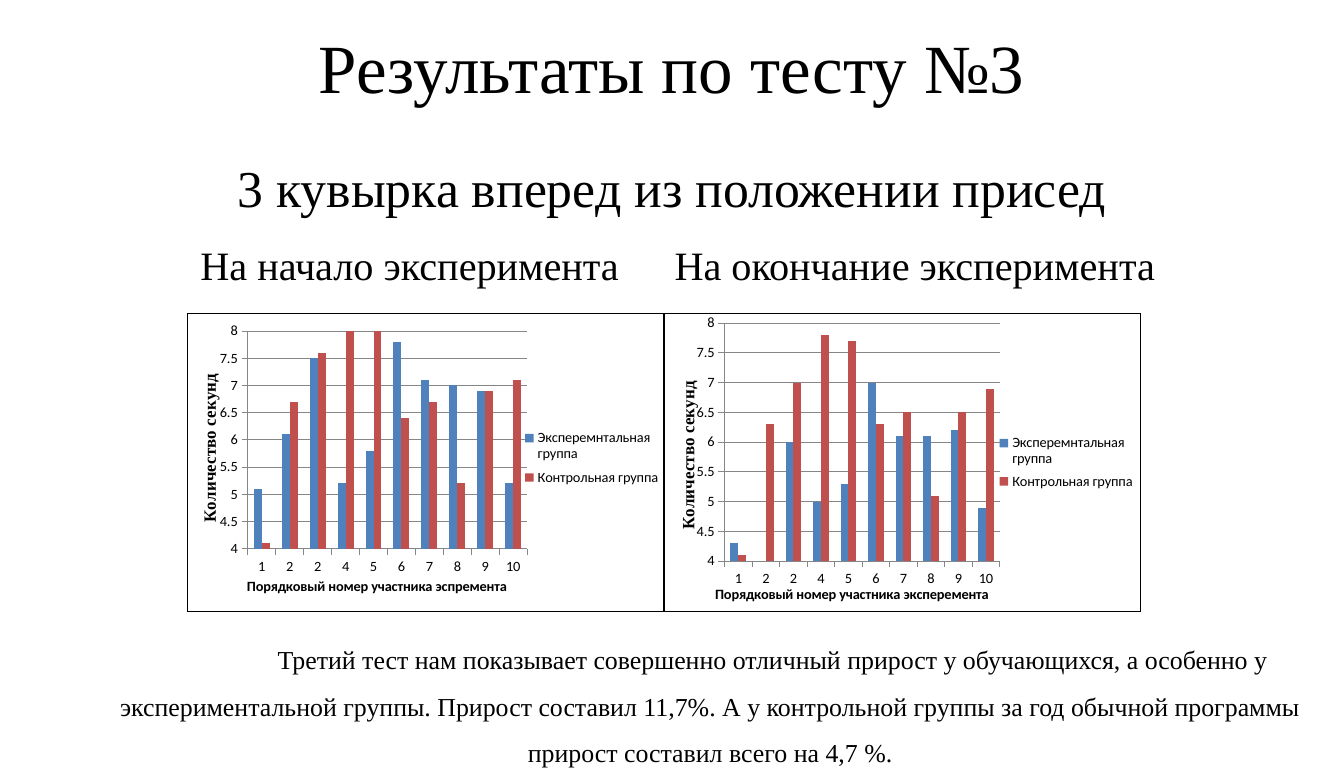
from lxml import etree
from pptx import Presentation
from pptx.chart.data import CategoryChartData
from pptx.dml.color import RGBColor
from pptx.enum.chart import XL_CHART_TYPE, XL_LEGEND_POSITION, XL_TICK_MARK
from pptx.enum.text import MSO_ANCHOR, PP_ALIGN
from pptx.oxml import parse_xml
from pptx.oxml.ns import nsdecls, qn
from pptx.util import Cm, Pt

BLACK = RGBColor(0x00, 0x00, 0x00)
GREY = RGBColor(0x86, 0x86, 0x86)
BLUE = RGBColor(0x4F, 0x81, 0xBD)
RED = RGBColor(0xC0, 0x50, 0x4D)
SERIF, SANS = "Times New Roman", "Calibri"
LEFT, CENTER = PP_ALIGN.LEFT, PP_ALIGN.CENTER
TOP, MIDDLE = MSO_ANCHOR.TOP, MSO_ANCHOR.MIDDLE
COLUMNS = XL_CHART_TYPE.COLUMN_CLUSTERED
LEGEND_RIGHT = XL_LEGEND_POSITION.RIGHT
OUTSIDE = XL_TICK_MARK.OUTSIDE

# text, (left, top, width, height) in cm, size, alignment, anchor, wrap
TEXTS = [
    ("Результаты по тесту №3", (1.65, 0.03, 29.69, 3.18), 48, CENTER, MIDDLE, True),
    ("3 кувырка вперед из положении присед", (1.65, 3.71, 29.69, 13.28), 36, CENTER, TOP, True),
    ("На начало эксперимента", (4.67, 5.77, 10.8, 1.45), 28, LEFT, TOP, False),
    ("На окончание эксперимента", (16.31, 5.77, 12.4, 1.45), 28, LEFT, TOP, True),
]
CONCLUSION = (
    "Третий тест нам показывает совершенно отличный прирост у обучающихся, "
    "а особенно у экспериментальной группы. Прирост составил 11,7%. А у контрольной "
    "группы за год обычной программы прирост составил всего на 4,7 %."
)
CONCLUSION_BOX = (0, 15.3, 32.99, 3.84)
FRAME_BOX = (4.6, 7.7, 23.4, 7.32)

PARTICIPANTS = ["1", "2", "2", "4", "5", "6", "7", "8", "9", "10"]
GROUPS = [("Эксперемнтальная группа", BLUE), ("Контрольная группа", RED)]
SECONDS_TITLE = "Количество секунд"
# Layouts are fractions of the chart: x, y and, where sized, width and height
CHARTS = [
    {
        "box": (4.32, 7.9, 11.99, 6.81),
        "title": "Порядковый номер участника эспремента",
        "values": [
            [5.1, 6.1, 7.5, 5.2, 5.8, 7.8, 7.1, 7, 6.9, 5.2],
            [4.1, 6.7, 7.6, 8.2, 8.4, 6.4, 6.7, 5.2, 6.9, 7.1],
        ],
        "plot": (0.147, 0.034, 0.572, 0.8),
        "legend": (0.71, 0.37, 0.29, 0.26),
        "cat_title": (0.14, 0.93),
        "val_title": (0.04, 0.19),
    },
    {
        "box": (16.31, 7.7, 11.81, 7.19),
        "title": "Порядковый номер участника эксперемента",
        "values": [
            [4.3, 0.7, 6, 5, 5.3, 7, 6.1, 6.1, 6.2, 4.9],
            [4.1, 6.3, 7, 7.8, 7.7, 6.3, 6.5, 5.1, 6.5, 6.9],
        ],
        "plot": (0.125, 0.033, 0.572, 0.825),
        "legend": (0.69, 0.4, 0.29, 0.23),
        "cat_title": (0.1, 0.93),
        "val_title": (0.02, 0.23),
    },
]


def set_format(target, **values):
    for name, value in values.items():
        setattr(target, name, value)


def set_font(font, size, name, bold=False):
    set_format(font, size=Pt(size), name=name, bold=bold)
    font.color.rgb = BLACK


def add_text(slide, text, box, size, align, anchor, wrap):
    tf = slide.shapes.add_textbox(*map(Cm, box)).text_frame
    set_format(tf, word_wrap=wrap, vertical_anchor=anchor)
    p = tf.paragraphs[0]
    p.alignment = align
    r = p.add_run()
    r.text = text
    set_font(r.font, size, SERIF)
    return p


def add_frame(slide):
    """Add the two-cell table that frames the charts."""
    table = slide.shapes.add_table(1, 2, *map(Cm, FRAME_BOX)).table
    set_format(table, first_row=False, horz_banding=False)
    for cell in table.iter_cells():
        tc_pr = cell._tc.get_or_add_tcPr()
        for side in ("lnL", "lnR", "lnT", "lnB"):
            tc_pr.append(parse_xml(
                f'<a:{side} {nsdecls("a")} w="12700"><a:solidFill>'
                f'<a:srgbClr val="{BLACK}"/></a:solidFill></a:{side}>'))
        cell.fill.background()


def place(element, index, layout):
    """Give a chart part a manual layout, as its child number index."""
    for old in element.findall(qn("c:layout")):
        element.remove(old)
    holder = etree.Element(qn("c:layout"))
    manual = etree.SubElement(holder, qn("c:manualLayout"))
    settings = [("xMode", "edge"), ("yMode", "edge"), *zip("xywh", layout)]
    if index == 0:
        settings.insert(0, ("layoutTarget", "inner"))
    for tag, value in settings:
        etree.SubElement(manual, qn(f"c:{tag}")).set("val", str(value))
    element.insert(index, holder)


def title_axis(axis, text, size, font_name, layout, rotation):
    title = axis.axis_title
    p = title.text_frame.paragraphs[0]
    r = p.add_run()
    r.text = text
    set_font(r.font, size, font_name, bold=True)
    title.element.find(".//" + qn("a:bodyPr")).set("rot", str(rotation))
    place(title.element, 1, layout)


def add_results_chart(slide, item):
    data = CategoryChartData()
    data.categories = PARTICIPANTS
    for (name, _), values in zip(GROUPS, item["values"]):
        data.add_series(name, values)
    chart = slide.shapes.add_chart(COLUMNS, *map(Cm, item["box"]), data).chart
    chart.has_title = False
    set_font(chart.font, 10, SANS)

    plot = chart.plots[0]
    set_format(plot, gap_width=150, overlap=0, vary_by_categories=False)
    for series, (_, color) in zip(plot.series, GROUPS):
        series.format.fill.solid()
        series.format.fill.fore_color.rgb = color

    cat_axis, val_axis = chart.category_axis, chart.value_axis
    set_format(val_axis, minimum_scale=4, maximum_scale=8, major_unit=0.5,
               has_major_gridlines=True)
    for axis in (cat_axis, val_axis):
        axis.major_tick_mark = OUTSIDE
        axis.format.line.color.rgb = GREY
    val_axis.major_gridlines.format.line.color.rgb = GREY
    title_axis(cat_axis, item["title"], 10, SANS, item["cat_title"], 0)
    title_axis(val_axis, SECONDS_TITLE, 12, SERIF, item["val_title"], -5400000)

    chart.has_legend = True
    set_format(chart.legend, position=LEGEND_RIGHT, include_in_layout=False)
    set_font(chart.legend.font, 10, SANS)
    place(chart.legend._element, 1, item["legend"])
    place(chart.element.find(".//" + qn("c:plotArea")), 0, item["plot"])


def main():
    prs = Presentation()
    set_format(prs, slide_width=Cm(32.99), slide_height=Cm(19))
    slide = prs.slides.add_slide(prs.slide_layouts[6])
    for text in TEXTS:
        add_text(slide, *text)
    add_frame(slide)
    for item in CHARTS:
        add_results_chart(slide, item)
    p = add_text(slide, CONCLUSION, CONCLUSION_BOX, 18, CENTER, TOP, True)
    p.line_spacing = 1.5
    p_pr = p._p.get_or_add_pPr()
    p_pr.set("marL", str(Cm(1.88)))
    p_pr.set("indent", str(Cm(3.07)))
    prs.save("out.pptx")


if __name__ == "__main__":
    main()
